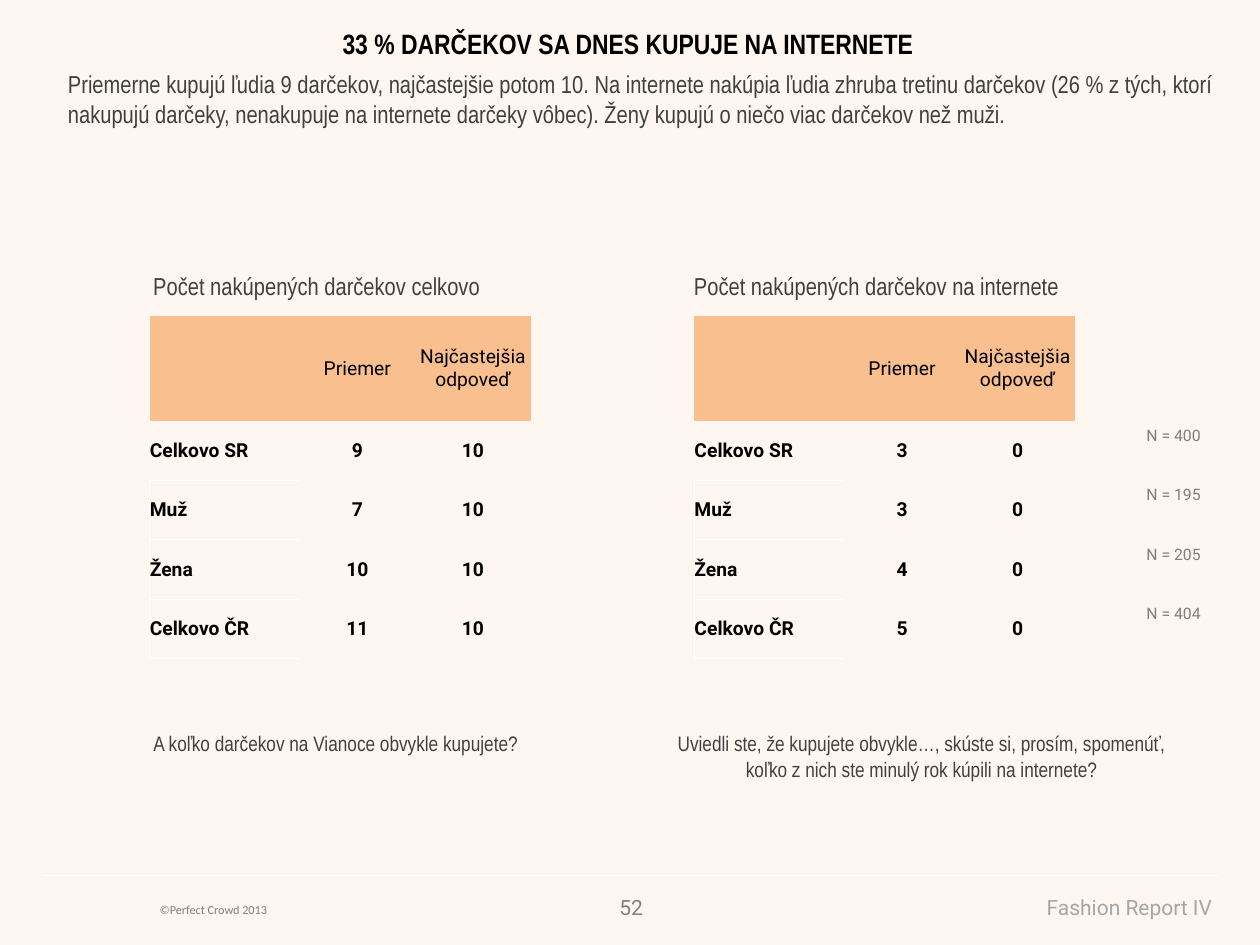
from dataclasses import dataclass

from lxml import etree
from pptx import Presentation
from pptx.dml.color import RGBColor
from pptx.enum.shapes import MSO_CONNECTOR
from pptx.enum.text import MSO_ANCHOR, PP_ALIGN
from pptx.oxml.ns import qn
from pptx.util import Cm, Pt

LEFT, MID, RIGHT = PP_ALIGN.LEFT, PP_ALIGN.CENTER, PP_ALIGN.RIGHT
CENTRE = MSO_ANCHOR.MIDDLE
STRAIGHT = MSO_CONNECTOR.STRAIGHT
NARROW, ROBOTO = "Arial Narrow", "Roboto"
BLACK, DARK, GREY, WHITE, PEACH = "000000", "404040", "808080", "FFFFFF", "FABF8F"
PLAIN = "{2D5ABB26-0587-4C30-8999-92F81FD0307C}"
ROW = 1.2


@dataclass
class Style:
    size: float
    face: str = NARROW
    color: str = DARK
    align: PP_ALIGN = LEFT
    bold: bool = False


@dataclass
class Label:
    text: str
    box: tuple[float, float, float, float]
    style: Style


@dataclass
class Grid:
    left: float
    rows: list[tuple[str, str, str]]


BODY = Style(14)
ASK = Style(12, align=MID)
HEAD = Style(11, ROBOTO, BLACK, MID)
NAME = Style(11, ROBOTO, BLACK, LEFT, True)
VALUE = Style(11, ROBOTO, BLACK, MID, True)
BASE = Style(9, ROBOTO, "7F7F7F")

LABELS = [
    Label("©Perfect Crowd 2013", (2.97, 18.06, 7.39, 0.56), Style(7, "Calibri", GREY)),
    Label("Fashion Report IV", (15.27, 17.91, 9.42, 0.76),
          Style(12, ROBOTO, "A6A6A6", RIGHT)),
    Label("52", (12.17, 17.91, 1.04, 0.76), Style(12, ROBOTO, GREY, RIGHT)),
    Label("A koľko darčekov na Vianoce obvykle kupujete?",
          (0.89, 14.61, 11.76, 0.76), ASK),
    Label("33 % DARČEKOV SA DNES KUPUJE NA INTERNETE",
          (1.42, 0.41, 22.48, 0.94), Style(16, NARROW, BLACK, MID, True)),
    Label("Priemerne kupujú ľudia 9 darčekov, najčastejšie potom 10. Na internete "
          "nakúpia ľudia zhruba tretinu darčekov (26 % z tých, ktorí nakupujú "
          "darčeky, nenakupuje na internete darčeky vôbec). Ženy kupujú o niečo "
          "viac darčekov než muži.", (1.12, 1.27, 24.28, 1.12), BODY),
    Label("Uviedli ste, že kupujete obvykle…, skúste si, prosím, spomenúť, koľko "
          "z nich ste minulý rok kúpili na internete?",
          (13.26, 14.61, 10.64, 1.27), ASK),
    Label("Počet nakúpených darčekov celkovo", (2.84, 5.33, 7.57, 0.86), BODY),
    Label("Počet nakúpených darčekov na internete", (13.74, 5.33, 8.51, 0.86), BODY),
]
TITLES = ("", "Priemer", "Najčastejšia odpoveď")
GRIDS = [
    Grid(3.02, [("Celkovo SR", "9", "10"), ("Muž", "7", "10"),
                ("Žena", "10", "10"), ("Celkovo ČR", "11", "10")]),
    Grid(14, [("Celkovo SR", "3", "0"), ("Muž", "3", "0"),
              ("Žena", "4", "0"), ("Celkovo ČR", "5", "0")]),
]
COUNTS = (400, 195, 205, 404)


def rgb(code: str) -> RGBColor:
    """Turn a hex string into a colour."""
    return RGBColor.from_string(code)


def write(frame, text: str, style: Style) -> None:
    """Put one styled paragraph into a text frame."""
    para = frame.paragraphs[0]
    para.text = text
    para.alignment = style.align
    font = para.font
    font.size, font.name, font.bold = Pt(style.size), style.face, style.bold
    font.color.rgb = rgb(style.color)


def add_label(slide, label: Label) -> None:
    """Add a wrapping text box."""
    frame = slide.shapes.add_textbox(*map(Cm, label.box)).text_frame
    frame.word_wrap = True
    write(frame, label.text, label.style)


def add_edge(cell, side: str) -> None:
    """Draw a thin white border on one side of a cell."""
    line = etree.SubElement(cell._tc.get_or_add_tcPr(), qn(f"a:ln{side}"), w=str(Pt(0.5)))
    fill = etree.SubElement(line, qn("a:solidFill"))
    etree.SubElement(fill, qn("a:srgbClr"), val=WHITE)


def fill_cell(cell, text: str, style: Style, fill: str = "", edges: str = "") -> None:
    """Set the text, borders and fill of a cell."""
    cell.margin_left = cell.margin_right = cell.margin_top = cell.margin_bottom = 0
    cell.vertical_anchor = CENTRE
    write(cell.text_frame, text, style)
    for side in edges:
        add_edge(cell, side)
    if fill:
        cell.fill.solid()
        cell.fill.fore_color.rgb = rgb(fill)
    else:
        cell.fill.background()


def add_table(slide, left: float, top: float, cols: list[float], rows: list[float]):
    """Add an unstyled table with the given column and row sizes."""
    frame = slide.shapes.add_table(len(rows), len(cols), Cm(left), Cm(top),
                                   Cm(sum(cols)), Cm(sum(rows)))
    frame.element.xpath(".//a:tableStyleId")[0].text = PLAIN
    table = frame.table
    table.first_row = table.horz_banding = False
    for col, width in zip(table.columns, cols):
        col.width = Cm(width)
    for row, height in zip(table.rows, rows):
        row.height = Cm(height)
    return table


def add_grid(slide, grid: Grid) -> None:
    """Add a table of gift counts with a peach header."""
    table = add_table(slide, grid.left, 6.38, [3.02, 2.33, 2.33], [2.1] + [ROW] * 4)
    for col, title in enumerate(TITLES):
        fill_cell(table.cell(0, col), title, HEAD, PEACH)
    for row, (name, *values) in enumerate(grid.rows, 1):
        fill_cell(table.cell(row, 0), name, NAME, edges="B" if row == 1 else "LTB")
        for col, value in enumerate(values, 1):
            fill_cell(table.cell(row, col), value, VALUE)


def add_counts(slide) -> None:
    """Add the column of sample sizes."""
    table = add_table(slide, 23.11, 8.18, [1.55], [ROW] * len(COUNTS))
    for row, count in enumerate(COUNTS):
        fill_cell(table.cell(row, 0), f"N = {count}", BASE)


def add_rule(slide) -> None:
    """Add the white line above the footer."""
    rule = slide.shapes.add_connector(STRAIGHT, Cm(0.84), Cm(17.65), Cm(24.56), Cm(17.65))
    rule.line.color.rgb = rgb(WHITE)
    rule.line.width = Pt(0.75)
    etree.SubElement(rule.element.spPr, qn("a:effectLst"))


def main() -> None:
    """Build and save the slide."""
    deck = Presentation()
    deck.slide_width, deck.slide_height = Cm(25.4), Cm(19.05)
    slide = deck.slides.add_slide(deck.slide_layouts[6])
    back = slide.background.fill
    back.solid()
    back.fore_color.rgb = rgb("FEF6F0")
    add_rule(slide)
    for label in LABELS:
        add_label(slide, label)
    for grid in GRIDS:
        add_grid(slide, grid)
    add_counts(slide)
    deck.save("out.pptx")


if __name__ == "__main__":
    main()
